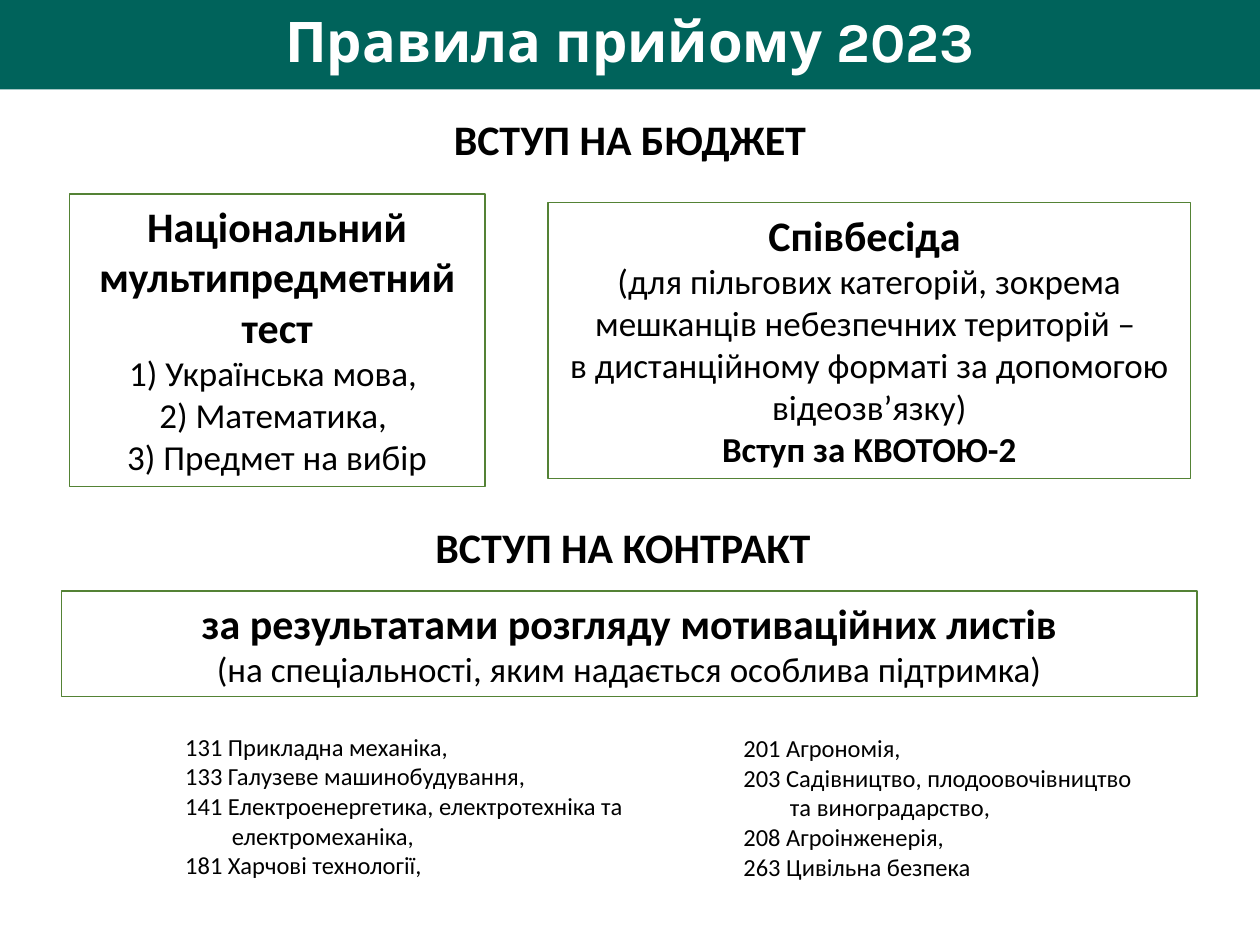
from dataclasses import dataclass

from pptx import Presentation
from pptx.dml.color import RGBColor
from pptx.enum.shapes import MSO_SHAPE
from pptx.enum.text import MSO_ANCHOR, MSO_AUTO_SIZE, PP_ALIGN
from pptx.util import Inches, Pt

COLUMNS, ROWS = 100, 75


@dataclass(frozen=True)
class Theme:
    band: RGBColor = RGBColor(0x00, 0x63, 0x5B)
    frame: RGBColor = RGBColor(0x54, 0x82, 0x35)
    ink: RGBColor = RGBColor(0, 0, 0)
    paper: RGBColor = RGBColor(255, 255, 255)
    body_font: str = "Calibri"
    title_font: str = "Karla"
    title: int = 32
    heading: int = 24
    body: int = 20
    listing: int = 14
    spacer: int = 13


def assign(target, values):
    for name, value in values.items():
        setattr(target, name, value)


class SlideBuilder:
    def __init__(self, deck, theme):
        self.theme = theme
        self.page = deck.slides.add_slide(deck.slide_layouts[5])
        self.column = deck.slide_width / COLUMNS
        self.row = deck.slide_height / ROWS

    def place(self, left, top, width, height):
        """Turn grid columns and rows into slide lengths."""
        return (round(left * self.column), round(top * self.row),
                round(width * self.column), round(height * self.row))

    def style(self, span, size, bold=False, **changes):
        color = changes.pop("color", self.theme.ink)
        assign(span.font, {"name": self.theme.body_font, "size": Pt(size),
                           "bold": bold, **changes})
        span.font.color.rgb = color

    def fill_text(self, frame, lines):
        """Fill a frame with centred (text, size, bold) lines."""
        assign(frame, {"word_wrap": True, "vertical_anchor": MSO_ANCHOR.TOP,
                       "auto_size": MSO_AUTO_SIZE.SHAPE_TO_FIT_TEXT})
        for index, (text, size, bold) in enumerate(lines):
            para = frame.add_paragraph() if index else frame.paragraphs[0]
            para.alignment = PP_ALIGN.CENTER
            span = para.add_run()
            span.text = text
            self.style(span, size, bold)

    def title(self, text, height):
        box = self.page.shapes.title
        assign(box, dict(zip(("left", "top", "width", "height"),
                             self.place(0, 0, COLUMNS, height))))
        box.fill.solid()
        box.fill.fore_color.rgb = self.theme.band
        margins = dict.fromkeys(("margin_left", "margin_top", "margin_right",
                                 "margin_bottom"), Inches(0.13))
        assign(box.text_frame, {**margins, "word_wrap": True,
                                "auto_size": MSO_AUTO_SIZE.NONE,
                                "vertical_anchor": MSO_ANCHOR.MIDDLE})
        para = box.text_frame.paragraphs[0]
        assign(para, {"alignment": PP_ALIGN.CENTER, "line_spacing": 0.9})
        span = para.add_run()
        span.text = text
        self.style(span, self.theme.title, True, name=self.theme.title_font,
                   color=self.theme.paper)

    def heading(self, text, *area):
        box = self.page.shapes.add_textbox(*self.place(*area))
        self.fill_text(box.text_frame, [(text, self.theme.heading, True)])

    def framed(self, lines, *area):
        box = self.page.shapes.add_shape(MSO_SHAPE.RECTANGLE, *self.place(*area))
        box.shadow.inherit = False
        box.fill.background()
        box.line.color.rgb = self.theme.frame
        box.line.width = Pt(0.75)
        self.fill_text(box.text_frame, lines)

    def listing(self, cells, left, top, width, line_height=2.36):
        """Draw a one-column table; each cell is a list of (text, indent)."""
        heights = [max(1, len(cell)) * line_height for cell in cells]
        table = self.page.shapes.add_table(
            len(cells), 1, *self.place(left, top, width, sum(heights))).table
        assign(table, {"first_row": False, "horz_banding": False})
        for index, lines in enumerate(cells):
            table.rows[index].height = round(heights[index] * self.row)
            cell = table.cell(index, 0)
            cell.fill.background()
            assign(cell, {"margin_left": Inches(0.07), "margin_top": 0,
                          "margin_right": Inches(0.07), "margin_bottom": 0})
            frame = cell.text_frame
            if not lines:
                ending = frame.paragraphs[0]._p.get_or_add_endParaRPr()
                ending.set("sz", str(self.theme.spacer * 100))
            for number, (text, indent) in enumerate(lines):
                para = frame.add_paragraph() if number else frame.paragraphs[0]
                para._p.get_or_add_pPr().set("marL", str(Inches(indent)))
                span = para.add_run()
                span.text = text
                self.style(span, self.theme.listing)


def main():
    deck = Presentation()
    assign(deck, {"slide_width": Inches(10), "slide_height": Inches(7.5)})
    theme = Theme()
    slide = SlideBuilder(deck, theme)
    large, normal = theme.heading, theme.body
    first, continued = 0.28, 0.65

    slide.title("Правила прийому 2023", 7.1)
    slide.heading("ВСТУП НА БЮДЖЕТ", 3, 8.5, 94, 5)
    slide.framed([
        ("Національний мультипредметний тест", large, True),
        ("1) Українська мова, ", normal, False),
        ("2) Математика, ", normal, False),
        ("3) Предмет на вибір", normal, False),
    ], 5.5, 15.4, 33, 23.2)
    slide.framed([
        ("Співбесіда ", large, True),
        ("(для пільгових категорій, зокрема мешканців небезпечних територій – ",
         normal, False),
        ("в дистанційному форматі за допомогою відеозв’язку)", normal, False),
        ("Вступ за КВОТОЮ-2", normal, True),
    ], 43.5, 16.1, 51, 21.9)
    slide.heading("ВСТУП НА КОНТРАКТ", 22, 40.9, 54.9, 5)
    slide.framed([
        ("за результатами розгляду мотиваційних листів", large, True),
        ("(на спеціальності, яким надається особлива підтримка)", normal, False),
    ], 4.9, 46.9, 90.1, 8.4)

    slide.listing([
        [],
        [("201 Агрономія,", first)],
        [("203 Садівництво, плодоовочівництво", first),
         ("та виноградарство,", continued)],
        [("208 Агроінженерія,", first), ("263 Цивільна безпека", first)],
        [],
    ], 55.5, 55.9, 36.9)
    slide.listing([
        [],
        [("131 Прикладна механіка,", first)],
        [("133 Галузеве машинобудування,", first)],
        [("141 Електроенергетика, електротехніка та", first),
         ("електромеханіка,", continued)],
        [("181 Харчові технології,", first)],
    ], 11.2, 55.8, 44.3)
    deck.save("out.pptx")


if __name__ == "__main__":
    main()
